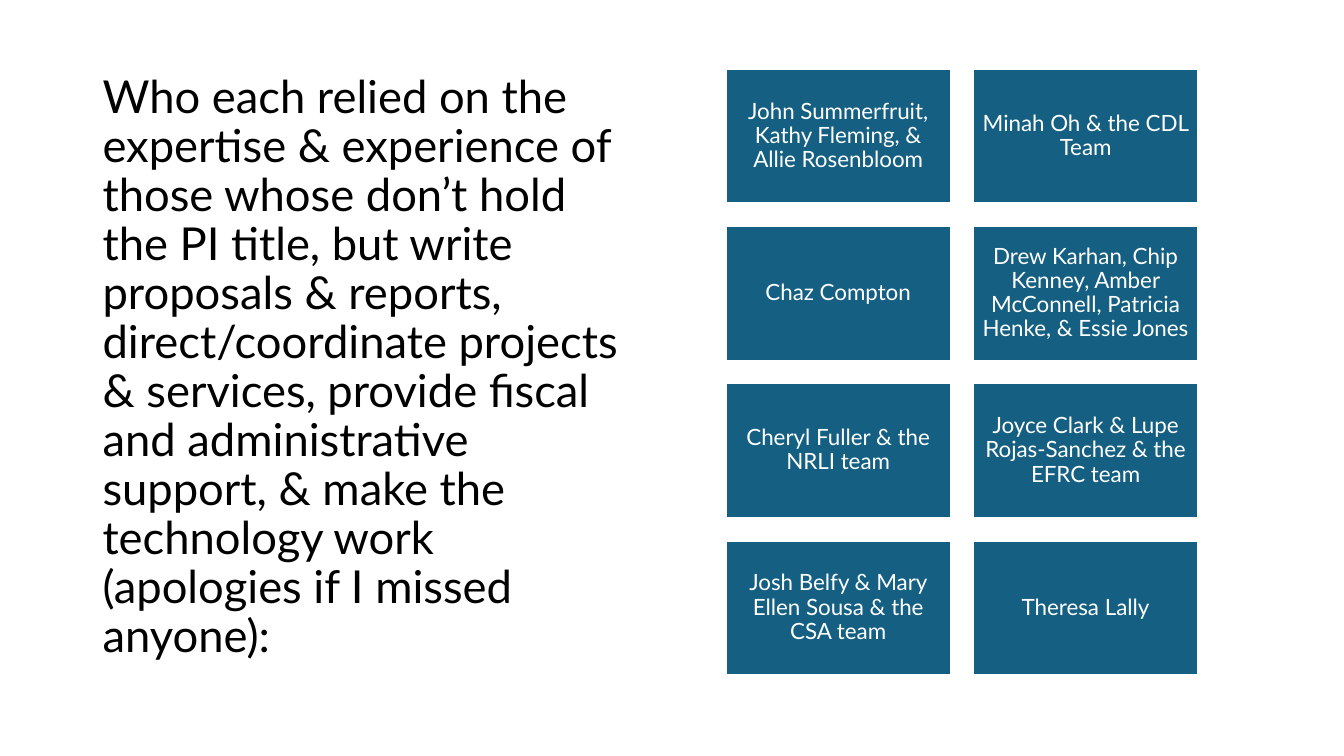
from pptx import Presentation
from pptx.dml.color import RGBColor
from pptx.enum.shapes import MSO_SHAPE
from pptx.enum.text import MSO_ANCHOR, PP_ALIGN
from pptx.util import Pt

RECT = MSO_SHAPE.RECTANGLE
MIDDLE = MSO_ANCHOR.MIDDLE
LEFT, CENTER = PP_ALIGN.LEFT, PP_ALIGN.CENTER

WHITE, BLACK, BLUE = "FFFFFF", "000000", "156082"
FONT = "Lato"

TITLE = (
    "Who each relied on the expertise & experience of those whose don’t hold "
    "the PI title, but write proposals & reports, direct/coordinate projects "
    "& services, provide fiscal and administrative support, & make the "
    "technology work (apologies if I missed anyone):"
)
TEAMS = [
    "John Summerfruit, Kathy Fleming, & Allie Rosenbloom",
    "Minah Oh & the CDL Team",
    "Chaz Compton",
    "Drew Karhan, Chip Kenney, Amber McConnell, Patricia Henke, & Essie Jones",
    "Cheryl Fuller & the NRLI team",
    "Joyce Clark & Lupe Rojas-Sanchez & the EFRC team",
    "Josh Belfy & Mary Ellen Sousa & the CSA team",
    "Theresa Lally",
]


def color(code):
    return RGBColor.from_string(code)


def assign(item, values):
    for name, value in values.items():
        setattr(item, name, value)


def write(shape, text, size, ink, align, pad):
    """Fill a shape with one formatted paragraph; pad is (side, top)."""
    side, top = map(Pt, pad)
    frame = shape.text_frame
    assign(frame, {
        "word_wrap": True, "vertical_anchor": MIDDLE,
        "margin_left": side, "margin_right": side,
        "margin_top": top, "margin_bottom": top,
    })
    para = frame.paragraphs[0]
    assign(para, {"text": text, "alignment": align, "line_spacing": 0.9})
    font = para.runs[0].font
    assign(font, {"name": FONT, "size": Pt(size)})
    font.color.rgb = color(ink)


def add_title(slide, box):
    shape = slide.shapes.add_textbox(*map(Pt, box))
    write(shape, TITLE, 32.4, BLACK, LEFT, (7.2, 3.6))


def add_tile(slide, box, text):
    tile = slide.shapes.add_shape(RECT, *map(Pt, box))
    tile.shadow.inherit = False
    tile.fill.solid()
    tile.fill.fore_color.rgb = color(BLUE)
    tile.line.color.rgb = color(WHITE)
    tile.line.width = Pt(1.5)
    write(tile, text, 16, WHITE, CENTER, (4.8, 4.8))


def add_grid(slide, box, cols=2, gap=16):
    left, top, width, height = box
    rows = -(-len(TEAMS) // cols)
    wide = (width - gap * (cols - 1)) / cols
    high = (height - gap * (rows - 1)) / rows
    for i, team in enumerate(TEAMS):
        row, col = divmod(i, cols)
        spot = (left + col * (wide + gap), top + row * (high + gap), wide, high)
        add_tile(slide, spot, team)


def main():
    deck = Presentation()
    deck.slide_width, deck.slide_height = Pt(960), Pt(540)
    slide = deck.slides.add_slide(deck.slide_layouts[6])
    # Statement on the left
    add_title(slide, (66.2, 43.9, 383, 438.5))
    # Team tiles on the right
    add_grid(slide, (518.4, 49, 337.4, 433.4))
    deck.save("out.pptx")


if __name__ == "__main__":
    main()
